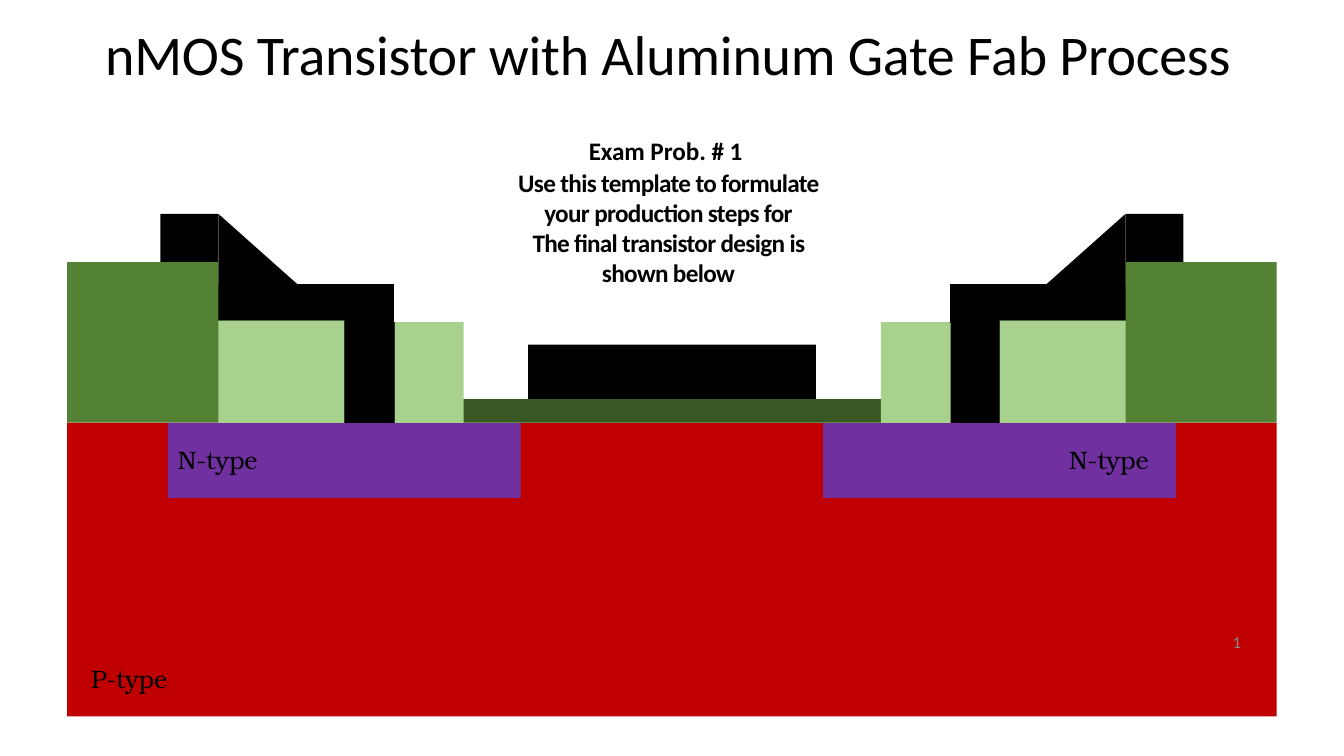
from dataclasses import dataclass

from pptx import Presentation
from pptx import util as u
from pptx.dml import color
from pptx.enum import shapes, text

Outline = tuple[tuple[float, float], ...]

SLIDE_WIDTH, SLIDE_HEIGHT = 960, 540
SURFACE = 302
SERIF, SANS = "TeX Gyre Bonum", "Calibri"
METAL, FIELD_OXIDE, PALE_OXIDE = "000000", "548235", "A9D18E"
GATE_OXIDE, N_WELL, SUBSTRATE, ETCHED = "385723", "7030A0", "C00000", "FFFFFF"


@dataclass(frozen=True)
class Slab:
    left: float
    top: float
    right: float
    bottom: float
    fill: str


@dataclass(frozen=True)
class Pattern:
    outlines: tuple[Outline, ...]
    fill: str


@dataclass(frozen=True)
class Label:
    left: float
    top: float
    width: float
    height: float
    paragraphs: tuple[str, ...]
    spacings: tuple[float, ...]
    size: float = 18
    font: str = SERIF
    ink: str = "000000"
    bold: bool = False
    align: text.PP_ALIGN = text.PP_ALIGN.LEFT
    before: float = 1


def box(left: float, top: float, right: float, bottom: float) -> Outline:
    return (right, top), (left, top), (left, bottom), (right, bottom)


def with_mirror(outline: Outline) -> tuple[Outline, Outline]:
    return outline, tuple((SLIDE_WIDTH - x, y) for x, y in outline)


METAL_STEP = ((281.6, 203), (212.4, 203), (156, 152.8), (156, 229), (281.6, 229))
OXIDE_PAD = box(156, 229, 246, SURFACE)

LAYERS = (
    Slab(114.6, 152.8, 156, 187.2, METAL),
    Slab(804, 152.8, 845.4, 187.2, METAL),
    Slab(48, 187.2, 912, SURFACE, FIELD_OXIDE),
    Slab(48, SURFACE, 912, 511.8, SUBSTRATE),
    Pattern(with_mirror(box(120, SURFACE, 372, 355.6)), N_WELL),
    Slab(156, 125.3, 804, 203, ETCHED),
    Pattern(with_mirror(METAL_STEP), METAL),
    Pattern((*with_mirror(OXIDE_PAD), box(282, 229, 678, SURFACE)), PALE_OXIDE),
    Slab(331.2, 285, 629.2, SURFACE, GATE_OXIDE),
    Pattern(with_mirror(box(246, 206, 282, SURFACE)), METAL),
    Slab(331.2, 179.3, 629.2, 285, ETCHED),
    Slab(377.2, 246.2, 582.8, 285, METAL),
    Slab(629.2, 230.2, 679, SURFACE, PALE_OXIDE),
    Pattern(with_mirror(box(281.5, 178.8, 347.5, 230)), ETCHED),
)

TITLE = Label(36, 12.4, 882, 49.7,
              ("nMOS Transistor with Aluminum Gate Fab Process",), (-0.15,),
              40, SANS, align=text.PP_ALIGN.CENTER, before=6.4)
LABELS = (
    Label(65.2, 473, 60.5, 24, ("P-type",), (-0.2,)),
    Label(880.5, 450, 20, 15, ("1",), (-0.5,), 12, SANS, "8A8A8A"),
    Label(127.1, 316.5, 63.4, 24, ("N-type",), (-0.15,)),
    Label(763.6, 316.5, 63.4, 24, ("N-type",), (-0.15,)),
    Label(368, 95.6, 219, 110,
          ("Exam Prob. # 1 ",
           "Use this template to formulate your production steps for\v"
           "The final transistor design is shown below"),
          (-0.07, -0.47), 18, SANS, bold=True, align=text.PP_ALIGN.CENTER),
)


def paint(fill_format, hex_colour: str) -> None:
    fill_format.solid()
    fill_format.fore_color.rgb = color.RGBColor.from_string(hex_colour)


def finish(material, hex_colour: str) -> None:
    material.shadow.inherit = False
    paint(material.fill, hex_colour)
    material.line.fill.background()


def draw_slab(slide, slab: Slab) -> None:
    block = slide.shapes.add_shape(
        shapes.MSO_SHAPE.RECTANGLE, u.Pt(slab.left), u.Pt(slab.top),
        u.Pt(slab.right - slab.left), u.Pt(slab.bottom - slab.top))
    finish(block, slab.fill)


def draw_pattern(slide, pattern: Pattern) -> None:
    contours = [[(u.Pt(x), u.Pt(y)) for x, y in outline]
                for outline in pattern.outlines]
    builder = slide.shapes.build_freeform(*contours[0][0])
    builder.add_line_segments(contours[0][1:], close=True)
    for start, *corners in contours[1:]:
        builder.move_to(*start)
        builder.add_line_segments(corners, close=True)
    finish(builder.convert_to_shape(), pattern.fill)


def write(holder, label: Label, inset_top: float) -> None:
    holder.left, holder.top = u.Pt(label.left), u.Pt(label.top)
    holder.width, holder.height = u.Pt(label.width), u.Pt(label.height)
    frame = holder.text_frame
    frame.text = "\n".join(label.paragraphs)
    frame.word_wrap = True
    frame.auto_size = text.MSO_AUTO_SIZE.NONE
    frame.vertical_anchor = text.MSO_ANCHOR.TOP
    frame.margin_left = frame.margin_right = frame.margin_bottom = 0
    frame.margin_top = u.Pt(inset_top)
    for paragraph, spacing in zip(frame.paragraphs, label.spacings):
        paragraph.alignment = label.align
        paragraph.space_before = u.Pt(label.before)
        for run in paragraph.runs:
            run.font.name = label.font
            run.font.size = u.Pt(label.size)
            run.font.bold = label.bold
            paint(run.font.fill, label.ink)
            run.font._element.set("spc", str(round(spacing * 100)))


def main() -> None:
    deck = Presentation()
    deck.slide_width, deck.slide_height = u.Pt(SLIDE_WIDTH), u.Pt(SLIDE_HEIGHT)
    slide = deck.slides.add_slide(deck.slide_layouts[5])
    for layer in LAYERS:
        if isinstance(layer, Slab):
            draw_slab(slide, layer)
        else:
            draw_pattern(slide, layer)
    write(slide.shapes.title, TITLE, 6.5)
    slide.shapes.title.text_frame.paragraphs[0].line_spacing = u.Pt(43.2)
    for label in LABELS:
        write(slide.shapes.add_textbox(0, 0, 0, 0), label, 1)
    deck.save("out.pptx")


if __name__ == "__main__":
    main()
